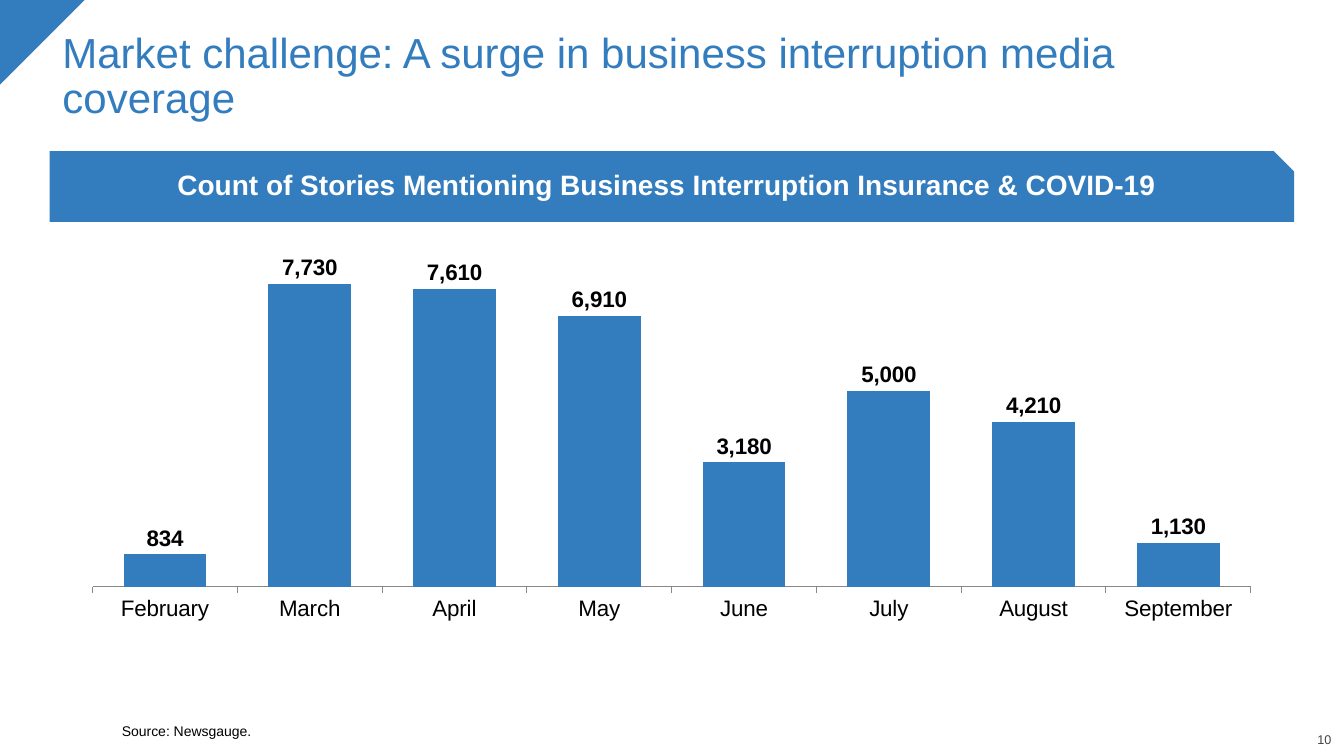
import lxml.etree
import pptx
import pptx.chart.data
import pptx.enum.chart
import pptx.enum.shapes
import pptx.enum.text
import pptx.dml.color
import pptx.oxml
import pptx.oxml.ns
import pptx.util

Pt = pptx.util.Pt
ALIGN = pptx.enum.text.PP_ALIGN
ANCHOR = pptx.enum.text.MSO_ANCHOR
SHAPE = pptx.enum.shapes.MSO_SHAPE
COLORS = {"blue": "337DBE", "white": "FFFFFF", "black": "000000",
          "page": "404040", "axis": "888888"}
FONT = "Arial"

STORIES = {"February": 834, "March": 7730, "April": 7610, "May": 6910,
           "June": 3180, "July": 5000, "August": 4210, "September": 1130}


def rgb(name):
    return pptx.dml.color.RGBColor.from_string(COLORS[name])


def write_text(shape, text, size=10, color="black", bold=False, align=ALIGN.LEFT,
               anchor=ANCHOR.MIDDLE, insets=(0, 0, 0, 0)):
    frame = shape.text_frame
    frame.word_wrap = True
    frame.vertical_anchor = anchor
    frame.margin_left, frame.margin_top, frame.margin_right, frame.margin_bottom = map(Pt, insets)
    paragraph = frame.paragraphs[0]
    paragraph.text = text
    paragraph.alignment = align
    paragraph.line_spacing = 0.9
    style_font(paragraph.font, size, color, bold)


def style_font(font, size, color="black", bold=False):
    font.name, font.size, font.bold = FONT, Pt(size), bold
    font.color.rgb = rgb(color)


class SlideBuilder:
    def __init__(self, slide):
        self.slide = slide

    def text(self, box, text, **style):
        shape = self.slide.shapes.add_textbox(*map(Pt, box))
        write_text(shape, text, **style)

    def shape(self, kind, box, fill="blue"):
        shape = self.slide.shapes.add_shape(kind, *map(Pt, box))
        shape.shadow.inherit = False
        shape.fill.solid()
        shape.fill.fore_color.rgb = rgb(fill)
        shape.line.fill.background()
        return shape

    def column_chart(self, box, name, values, maximum, plot):
        data = pptx.chart.data.CategoryChartData(number_format="#,##0")
        data.categories = list(values)
        data.add_series(name, list(values.values()))
        kind = pptx.enum.chart.XL_CHART_TYPE.COLUMN_CLUSTERED
        chart = self.slide.shapes.add_chart(kind, *map(Pt, box), data).chart
        chart.has_legend = chart.has_title = False
        style_font(chart.font, 16)

        # Axes
        value_axis = chart.value_axis
        value_axis.visible = False
        value_axis.has_major_gridlines = False
        value_axis.minimum_scale, value_axis.maximum_scale = 0, maximum
        category_axis = chart.category_axis
        category_axis.major_tick_mark = pptx.enum.chart.XL_TICK_MARK.OUTSIDE
        category_axis.format.line.color.rgb = rgb("axis")
        category_axis.format.line.width = Pt(0.75)

        # Columns and their labels
        columns = chart.plots[0]
        columns.gap_width = 75
        columns.vary_by_categories = False
        fill = columns.series[0].format.fill
        fill.solid()
        fill.fore_color.rgb = rgb("blue")
        columns.has_data_labels = True
        labels = columns.data_labels
        labels.show_value = True
        labels.number_format, labels.number_format_is_linked = "#,##0", False
        labels.position = pptx.enum.chart.XL_LABEL_POSITION.OUTSIDE_END
        style_font(labels.font, 16, bold=True)

        self.place_plot(columns, plot)

    def place_plot(self, columns, plot):
        area = columns._element.getparent()
        tag = pptx.oxml.ns.qn
        for layout in area.findall(tag("c:layout")):
            area.remove(layout)
        layout = lxml.etree.Element(tag("c:layout"))
        area.insert(0, layout)
        manual = lxml.etree.SubElement(layout, tag("c:manualLayout"))
        settings = {"layoutTarget": "inner", "xMode": "edge", "yMode": "edge",
                    **dict(zip("xywh", plot))}
        for key, value in settings.items():
            lxml.etree.SubElement(manual, tag(f"c:{key}")).set("val", str(value))


def main():
    presentation = pptx.Presentation()
    presentation.slide_width, presentation.slide_height = Pt(960), Pt(540)
    builder = SlideBuilder(presentation.slides.add_slide(presentation.slide_layouts[6]))

    # Page number and corner
    builder.text((905, 525, 46, 9), "10", size=9, color="page",
                 align=ALIGN.RIGHT, anchor=ANCHOR.BOTTOM)
    corner = builder.shape(SHAPE.RIGHT_TRIANGLE, (0, 0, 60.5, 60.5))
    corner.rotation = 90

    # Title and source
    builder.text((37.5, 18, 888, 75),
                 "Market challenge: A surge in business interruption media coverage",
                 size=30, color="blue", insets=(7.2, 3.6, 7.2, 3.6))
    builder.text((87, 495.5, 838, 32.5), "Source: Newsgauge.", anchor=ANCHOR.BOTTOM)

    # Banner
    banner = builder.shape(SHAPE.SNIP_1_RECTANGLE, (35.5, 108, 889, 50.5))
    banner.adjustments[0] = 0.29
    write_text(banner, "Count of Stories Mentioning Business Interruption Insurance & COVID-19",
               size=20, color="white", bold=True, align=ALIGN.CENTER,
               insets=(14.4, 7.2, 14.4, 14.4))

    # Stories by month
    builder.column_chart((52.5, 158.5, 855.5, 295), "Series 1", STORIES,
                         maximum=9000, plot=(0.016, 0.03, 0.967, 0.854))

    presentation.save("out.pptx")


if __name__ == "__main__":
    main()
